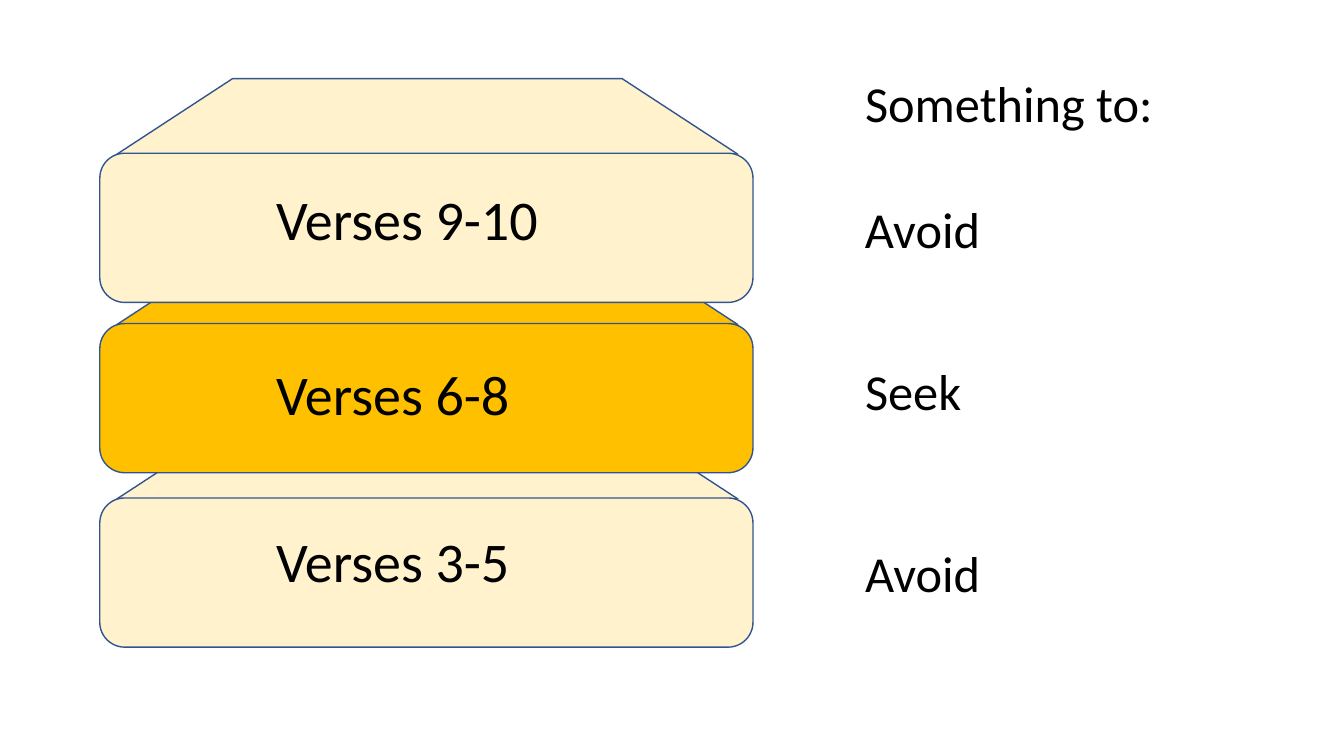
from pptx import Presentation
from pptx.dml.color import RGBColor
from pptx.enum.shapes import MSO_SHAPE as Shape
from pptx.enum.text import MSO_AUTO_SIZE as AutoSize
from pptx.util import Inches, Pt


def color(hex_code):
    return RGBColor.from_string(hex_code)


class Board:
    """Draws styled elements on one slide, measured on a grid of 40 columns by 30 rows."""

    COLS, ROWS = 40, 30
    FONT, INK, OUTLINE = "Calibri", "000000", "325491"

    def __init__(self, prs):
        self.col = prs.slide_width / self.COLS
        self.row = prs.slide_height / self.ROWS
        self.s = prs.slides.add_slide(prs.slide_layouts[6])

    def box(self, x, y, w, h):
        return (round(x * self.col), round(y * self.row),
                round(w * self.col), round(h * self.row))

    def shape(self, parent, kind, x, y, w, h, fill):
        sp = parent.add_shape(kind, *self.box(x, y, w, h))
        sp.shadow.inherit = False
        sp.fill.solid()
        sp.fill.fore_color.rgb = color(fill)
        sp.line.color.rgb = color(self.OUTLINE)
        sp.line.width = Pt(1)
        return sp

    def text(self, parent, text, x, y, w, h, size, wrap=True):
        tf = parent.add_textbox(*self.box(x, y, w, h)).text_frame
        tf.word_wrap = wrap
        tf.auto_size = AutoSize.SHAPE_TO_FIT_TEXT
        r = tf.paragraphs[0].add_run()
        r.text = text
        r.font.name = self.FONT
        r.font.size = Pt(size)
        r.font.color.rgb = color(self.INK)

    def layer(self, label, face_y, lid_h, label_y, label_w, fill):
        group = self.s.shapes.add_group_shape().shapes
        lid = self.shape(group, Shape.TRAPEZOID, 3.48, face_y - lid_h + 0.04,
                         18.48, lid_h, fill)
        lid.adjustments[0] = 1.53
        self.shape(group, Shape.FLOWCHART_ALTERNATE_PROCESS, 2.97, face_y,
                   19.44, 5.92, fill)
        self.text(group, label, 7.92, label_y, label_w, 3.08, 40, wrap=False)

    def note(self, text, y, w):
        self.text(self.s.shapes, text, 25.45, y, w, 2.84, 36)


LAYERS = [
    ("Verses 3-5", 19.76, 3.88, 20.68, 7.62, "FFF2CC"),
    ("Verses 6-8", 12.84, 3.88, 14.08, 7.62, "FFC000"),
    ("Verses 9-10", 6.08, 3, 7.12, 8.49, "FFF2CC"),
]
NOTES = [
    ("Something to:", 2.68, 11.52),
    ("Avoid", 7.68, 9.18),
    ("Seek", 14.08, 7.47),
    ("Avoid", 21.32, 11.61),
]


def main():
    prs = Presentation()
    prs.slide_width, prs.slide_height = Inches(13.33), Inches(7.5)
    board = Board(prs)
    for layer in LAYERS:
        board.layer(*layer)
    for note in NOTES:
        board.note(*note)
    prs.save("out.pptx")


if __name__ == "__main__":
    main()
